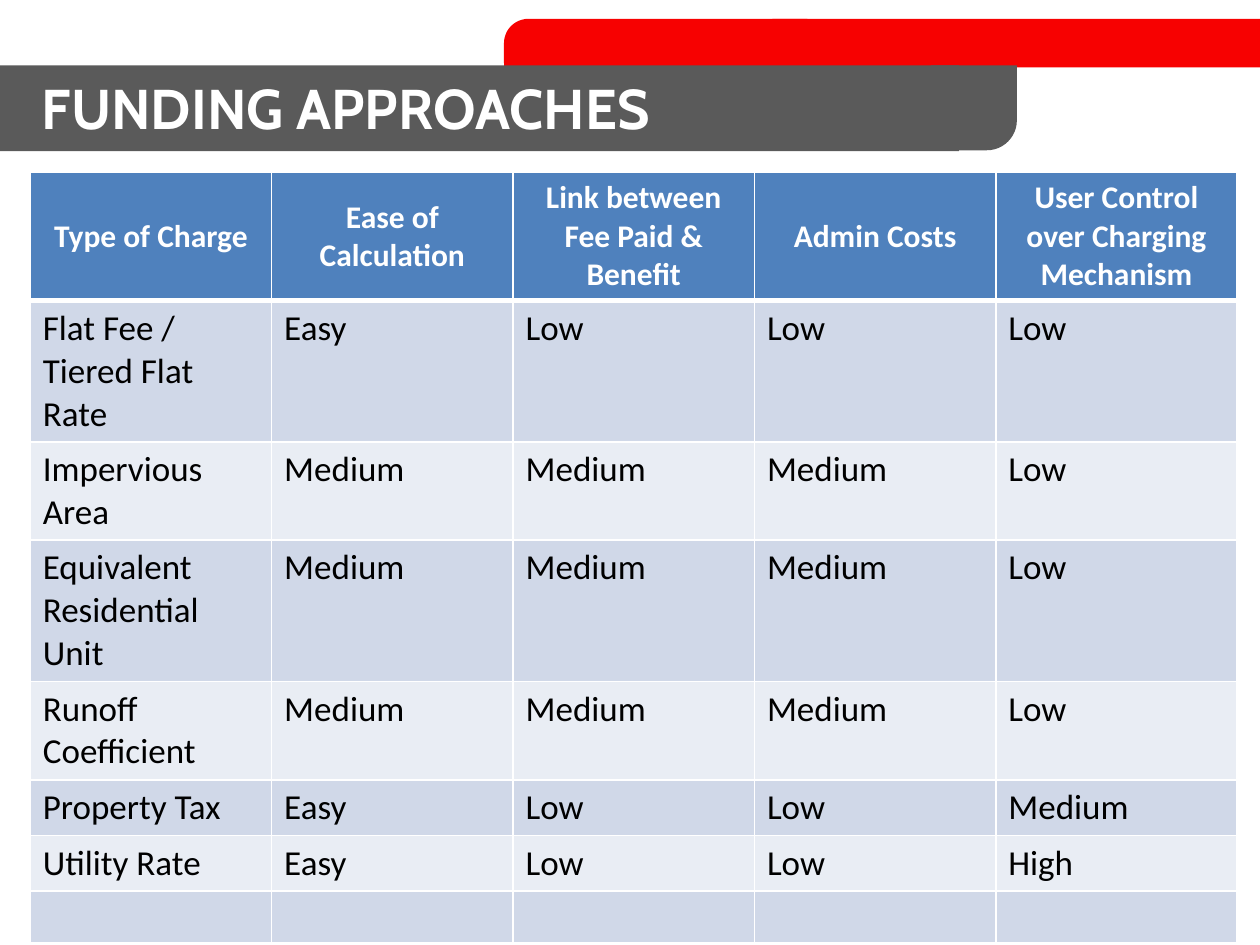
"""Build the funding approaches slide with its banner and table."""
from dataclasses import dataclass

from lxml.etree import SubElement
from pptx import Presentation
from pptx.dml.color import RGBColor
from pptx.enum.shapes import MSO_SHAPE
from pptx.enum.text import MSO_ANCHOR, MSO_AUTO_SIZE, PP_ALIGN
from pptx.oxml.ns import qn
from pptx.slide import Slide
from pptx.util import Cm, Pt

RED = RGBColor(0xF7, 0x01, 0x01)
GREY = RGBColor(0x5A, 0x5A, 0x5A)
BLUE = RGBColor(0x4F, 0x81, 0xBD)
DARK = RGBColor(0xD0, 0xD8, 0xE8)
LIGHT = RGBColor(0xE9, 0xED, 0xF4)
WHITE = RGBColor(0xFF, 0xFF, 0xFF)
BLACK = RGBColor(0, 0, 0)


@dataclass
class Bar:
    left: float
    top: float
    width: float
    height: float
    fill: RGBColor
    round: bool = False


@dataclass
class Row:
    height: float
    texts: tuple[str, ...]


BARS = (
    Bar(15.57, 0.38, 9.83, 0.98, RED),
    Bar(10.16, 0.38, 6.55, 1.37, RED, True),
    Bar(0, 1.32, 19.33, 1.73, GREY),
    Bar(18.77, 1.32, 1.73, 0.74, GREY),
    Bar(14.63, 1.35, 5.87, 1.68, GREY, True),
)
MIDDLE = ("Medium", "Medium", "Medium", "Low")
ROWS = (
    Row(2.57, ("Type of Charge", "Ease of Calculation", "Link between Fee Paid & Benefit",
               "Admin Costs", "User Control over Charging Mechanism")),
    Row(2.67, ("Flat Fee / Tiered Flat Rate", "Easy", "Low", "Low", "Low")),
    Row(1.85, ("Impervious Area", *MIDDLE)),
    Row(2.67, ("Equivalent Residential Unit", *MIDDLE)),
    Row(1.85, ("Runoff Coefficient", *MIDDLE)),
    Row(1.04, ("Property Tax", "Easy", "Low", "Low", "Medium")),
    Row(1.04, ("Utility Rate", "Easy", "Low", "Low", "High")),
    Row(1.04, ("",) * 5),
)


def draw_bar(slide: Slide, bar: Bar) -> None:
    kind = MSO_SHAPE.ROUNDED_RECTANGLE if bar.round else MSO_SHAPE.RECTANGLE
    shape = slide.shapes.add_shape(
        kind, Cm(bar.left), Cm(bar.top), Cm(bar.width), Cm(bar.height))
    if bar.round:
        shape.adjustments[0] = 0.36
    shape.shadow.inherit = False
    shape.fill.solid()
    shape.fill.fore_color.rgb = bar.fill
    shape.line.fill.background()


def draw_title(slide: Slide, text: str) -> None:
    title = slide.shapes.title
    title.left, title.top, title.width, title.height = Cm(0.61), Cm(1.3), Cm(18.34), Cm(1.73)
    title.element.getparent().append(title.element)
    frame = title.text_frame
    frame.text = text
    frame.word_wrap = True
    frame.auto_size = MSO_AUTO_SIZE.NONE
    frame.vertical_anchor = MSO_ANCHOR.MIDDLE
    frame.margin_left = frame.margin_right = Cm(0.23)
    frame.margin_top = frame.margin_bottom = Cm(0.1)
    line = frame.paragraphs[0]
    line.alignment = PP_ALIGN.LEFT
    font = line.runs[0].font
    font.name, font.size, font.bold = "Cabin", Pt(32), True
    font.color.rgb = WHITE


def draw_edge(cell, side: str, width: int) -> None:
    edge = SubElement(cell._tc.get_or_add_tcPr(), qn(f"a:ln{side}"), w=str(Pt(width)))
    fill = SubElement(edge, qn("a:solidFill"))
    SubElement(fill, qn("a:srgbClr"), val=str(WHITE))


def fill_cell(cell, text: str, index: int) -> None:
    head = index == 0
    for side in "LRTB":
        thick = (index, side) in ((0, "B"), (1, "T"))
        draw_edge(cell, side, 3 if thick else 1)
    cell.fill.solid()
    cell.fill.fore_color.rgb = BLUE if head else DARK if index % 2 else LIGHT
    cell.vertical_anchor = MSO_ANCHOR.MIDDLE if head else MSO_ANCHOR.TOP
    cell.text_frame.text = text
    line = cell.text_frame.paragraphs[0]
    line.alignment = PP_ALIGN.CENTER if head else PP_ALIGN.LEFT
    for run in line.runs:
        run.font.name = "Calibri"
        run.font.size = Pt(18 if head else 20)
        run.font.bold = head
        run.font.color.rgb = WHITE if head else BLACK


def draw_table(slide: Slide, rows: tuple[Row, ...]) -> None:
    count = len(rows[0].texts)
    height = sum(row.height for row in rows)
    table = slide.shapes.add_table(
        len(rows), count, Cm(0.61), Cm(3.48), Cm(24.33), Cm(height)).table
    for index, row in enumerate(rows):
        table.rows[index].height = Cm(row.height)
        for col, text in enumerate(row.texts):
            fill_cell(table.cell(index, col), text, index)


def main() -> None:
    deck = Presentation()
    deck.slide_width, deck.slide_height = Cm(25.4), Cm(19.05)
    slide = deck.slides.add_slide(deck.slide_layouts[5])
    for bar in BARS:
        draw_bar(slide, bar)
    draw_title(slide, "FUNDING APPROACHES")
    draw_table(slide, ROWS)
    deck.save("out.pptx")


if __name__ == "__main__":
    main()
